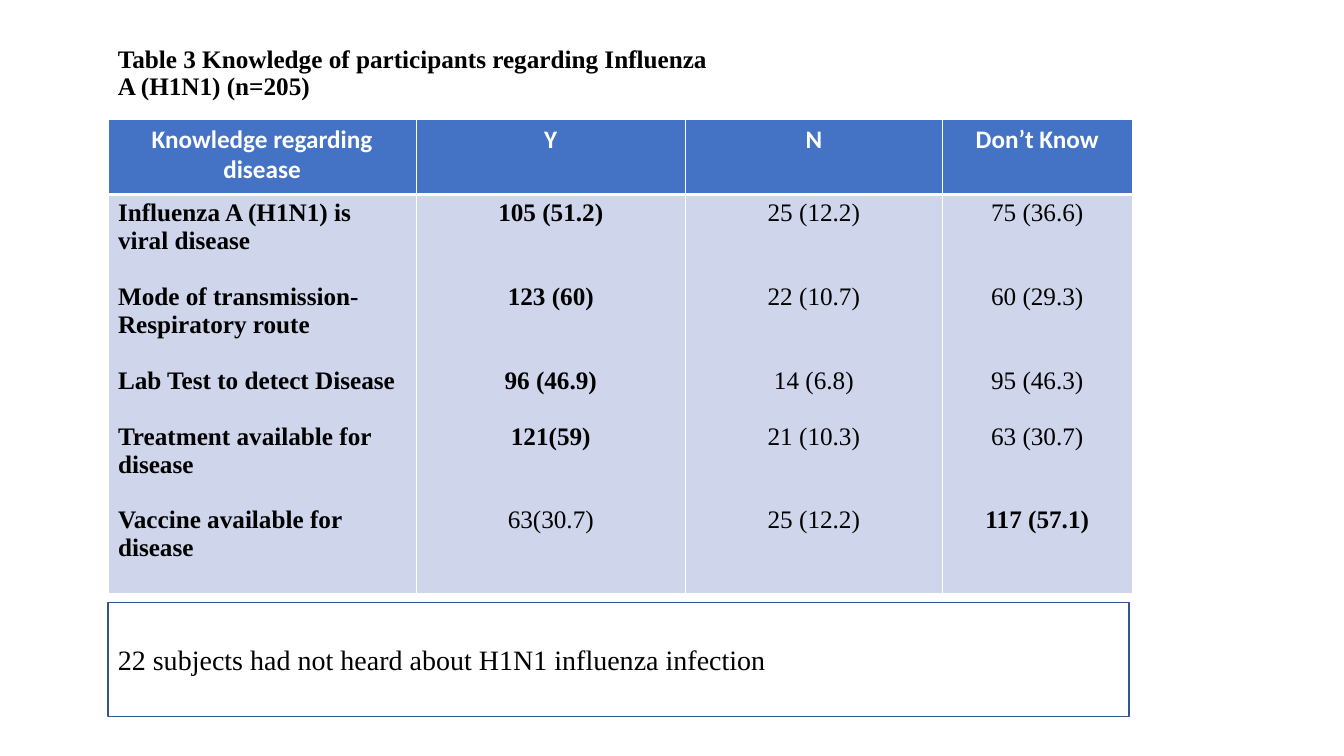
"""Builds a slide with a table of participants' knowledge of influenza A (H1N1)."""
import pptx
import pptx.dml.color
import pptx.enum.shapes
import pptx.enum.text
import pptx.oxml
import pptx.oxml.ns
import pptx.util
from pptx.util import Cm, Pt

RGBColor = pptx.dml.color.RGBColor
ALIGN = pptx.enum.text.PP_ALIGN
ANCHOR = pptx.enum.text.MSO_ANCHOR

BLACK = RGBColor(0x00, 0x00, 0x00)
WHITE = RGBColor(0xFF, 0xFF, 0xFF)
HEADER_BLUE = RGBColor(0x44, 0x72, 0xC4)
BODY_BLUE = RGBColor(0xCF, 0xD5, 0xEA)
FRAME_BLUE = RGBColor(0x32, 0x54, 0x91)

LEFT = Cm(2.72)
LINE_HEIGHT = 19.93
COLUMN_WIDTHS = (7.77, 6.78, 6.48, 4.78)
HEADINGS = ("Knowledge regarding disease", "Y", "N", "Don’t Know")
LABEL_LINES = (2, 2, 1, 2, 2)
ANSWERS = (
    ("Influenza A (H1N1) is viral disease", "105 (51.2)", "25 (12.2)", "75 (36.6)"),
    ("Mode of transmission-Respiratory route", "123 (60)", "22 (10.7)", "60 (29.3)"),
    ("Lab Test to detect Disease", "96 (46.9)", "14 (6.8)", "95 (46.3)"),
    ("Treatment available for disease", "121(59)", "21 (10.3)", "63 (30.7)"),
    ("Vaccine available for disease", "63(30.7)", "25 (12.2)", "117 (57.1)"),
)
MAJORITY_COLUMNS = (1, 1, 1, 1, 3)


class KnowledgeSlide:
    """Holds the text style and the current slide."""

    def __init__(self, page, body_font="Times New Roman", header_font="Calibri"):
        self.page = page
        self.body_font = body_font
        self.header_font = header_font

    def add_span(self, para, text, size=18, bold=False, color=BLACK, font=None):
        span = para.add_run()
        span.text = text
        span.font.name = font or self.body_font
        span.font.size = Pt(size)
        span.font.bold = bold
        span.font.color.rgb = color

    def title(self, text, top, width, height):
        box = self.page.shapes.add_textbox(LEFT, top, width, height)
        frame = box.text_frame
        frame.word_wrap = True
        frame.vertical_anchor = ANCHOR.MIDDLE
        frame.paragraphs[0].line_spacing = 0.9
        self.add_span(frame.paragraphs[0], text, bold=True)

    def note(self, text, top, width, height):
        box = self.page.shapes.add_shape(
            pptx.enum.shapes.MSO_SHAPE.RECTANGLE, LEFT, top, width, height)
        box.shadow.inherit = False
        box.fill.solid()
        box.fill.fore_color.rgb = WHITE
        box.line.color.rgb = FRAME_BLUE
        box.line.width = Pt(1)
        frame = box.text_frame
        frame.word_wrap = True
        frame.vertical_anchor = ANCHOR.MIDDLE
        frame.paragraphs[0].alignment = ALIGN.LEFT
        self.add_span(frame.paragraphs[0], text, size=20)

    def style_cell(self, cell, fill, top=1, bottom=1):
        properties = cell._tc.get_or_add_tcPr()
        for side, width in (("L", 1), ("R", 1), ("T", top), ("B", bottom)):
            properties.append(pptx.oxml.parse_xml(
                f'<a:ln{side} {pptx.oxml.ns.nsdecls("a")} w="{Pt(width)}">'
                f'<a:solidFill><a:srgbClr val="{WHITE}"/></a:solidFill></a:ln{side}>'))
        cell.fill.solid()
        cell.fill.fore_color.rgb = fill

    def answer_column(self, cell, column):
        for row, answers in enumerate(ANSWERS):
            para = cell.text_frame.paragraphs[0]
            if row:
                para = cell.text_frame.add_paragraph()
                gap_lines = LABEL_LINES[row - 1] if column else 1
                para.space_before = Pt(LINE_HEIGHT * gap_lines)
            para.alignment = ALIGN.CENTER if column else ALIGN.LEFT
            bold = column in (0, MAJORITY_COLUMNS[row])
            self.add_span(para, answers[column], bold=bold)

    def table(self, top, header_height, body_height):
        table = self.page.shapes.add_table(
            2, len(HEADINGS), LEFT, top, Cm(sum(COLUMN_WIDTHS)),
            header_height + body_height).table
        table.horz_banding = False
        table.rows[0].height = header_height
        table.rows[1].height = body_height
        for column, heading in enumerate(HEADINGS):
            table.columns[column].width = Cm(COLUMN_WIDTHS[column])
            header, body = table.cell(0, column), table.cell(1, column)
            self.style_cell(header, HEADER_BLUE, bottom=3)
            self.style_cell(body, BODY_BLUE, top=3)
            para = header.text_frame.paragraphs[0]
            para.alignment = ALIGN.CENTER
            self.add_span(para, heading, bold=True, color=WHITE, font=self.header_font)
            self.answer_column(body, column)


def main():
    deck = pptx.Presentation()
    deck.slide_width, deck.slide_height = Cm(33.87), Cm(19.05)
    slide = KnowledgeSlide(deck.slides.add_slide(deck.slide_layouts[6]))
    slide.title("Table 3 Knowledge of participants regarding Influenza A (H1N1) (n=205)",
                Cm(1.02), Cm(15.82), Cm(1.7))
    slide.table(Cm(3), Cm(1.9), Cm(10.06))
    slide.note("22 subjects had not heard about H1N1 influenza infection",
               Cm(15.19), Cm(25.73), Cm(2.87))
    deck.save("out.pptx")


if __name__ == "__main__":
    main()
